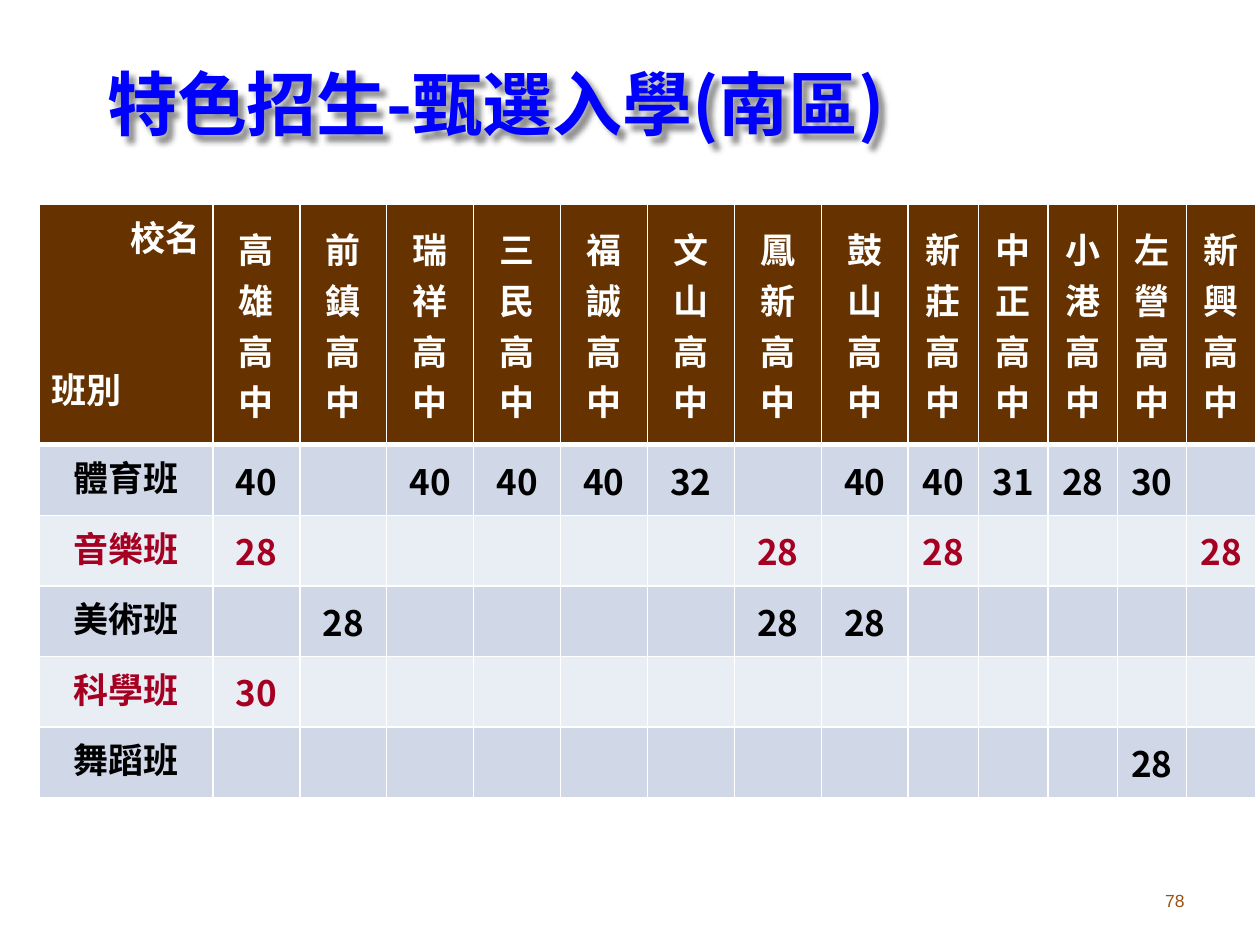
import pptx
import pptx.dml.color
import pptx.enum.text
import pptx.oxml
import pptx.oxml.ns
import pptx.util
from lxml import etree

Inches, Pt = pptx.util.Inches, pptx.util.Pt
RGBColor = pptx.dml.color.RGBColor
Align = pptx.enum.text.PP_ALIGN
Anchor = pptx.enum.text.MSO_ANCHOR
qn = pptx.oxml.ns.qn

BLUE = RGBColor(0x00, 0x00, 0xFF)
BROWN = RGBColor(0x66, 0x33, 0x00)
RUST = RGBColor(0x9A, 0x53, 0x15)
WHITE = RGBColor(0xFF, 0xFF, 0xFF)
BLACK = RGBColor(0x00, 0x00, 0x00)
RED = RGBColor(0xA5, 0x00, 0x21)
BANDS = (RGBColor(0xD0, 0xD8, 0xE8), RGBColor(0xE9, 0xED, 0xF4))
INKS = (BLACK, RED)

FONT = "Noto Sans CJK SC"
SCHOOLS = ["高雄", "前鎮", "瑞祥", "三民", "福誠", "文山", "鳳新",
           "鼓山", "新莊", "中正", "小港", "左營", "新興"]
CLASSES = {
    "體育班": {"高雄": 40, "瑞祥": 40, "三民": 40, "福誠": 40, "文山": 32,
            "鼓山": 40, "新莊": 40, "中正": 31, "小港": 28, "左營": 30},
    "音樂班": {"高雄": 28, "鳳新": 28, "新莊": 28, "新興": 28},
    "美術班": {"前鎮": 28, "鳳新": 28, "鼓山": 28},
    "科學班": {"高雄": 30},
    "舞蹈班": {"左營": 28},
}
WIDTHS = [1.38] + [0.69] * 8 + [0.56] + [0.55] * 4
HEIGHTS = [1.91] + [0.56] * len(CLASSES)

SHADOW = (
    '<a:effectLst xmlns:a="http://schemas.openxmlformats.org/drawingml/2006/main">'
    '<a:outerShdw blurRad="38100" dist="50800" dir="2700000" algn="tl">'
    '<a:srgbClr val="000000"><a:alpha val="43000"/></a:srgbClr>'
    '</a:outerShdw></a:effectLst>'
)


def style(para, size, color, align, name=FONT, bold=True):
    para.alignment = align
    font = para.font
    font.size, font.bold, font.name = Pt(size), bold, name
    font.color.rgb = color
    etree.SubElement(font._element, qn("a:ea"), typeface=name)


def edge(cell, base=1):
    """Draw white cell borders; base is the width of the bottom one."""
    props = cell._tc.get_or_add_tcPr()
    for side, width in (("L", 1), ("R", 1), ("T", 1), ("B", base)):
        line = etree.SubElement(props, qn(f"a:ln{side}"), w=str(Pt(width)))
        fill = etree.SubElement(line, qn("a:solidFill"))
        etree.SubElement(fill, qn("a:srgbClr"), val=str(WHITE))


def paint(cell, fill, base=1):
    edge(cell, base)
    cell.fill.solid()
    cell.fill.fore_color.rgb = fill


def write(cell, text, color, anchor=Anchor.MIDDLE):
    cell.vertical_anchor = anchor
    cell.text = text
    style(cell.text_frame.paragraphs[0], 20, color, Align.CENTER)


def add_title(slide, left, top, width, height):
    title = slide.shapes.title
    title.left, title.top, title.width, title.height = left, top, width, height
    frame = title.text_frame
    frame.text = "特色招生-甄選入學(南區)"
    frame.auto_size = pptx.enum.text.MSO_AUTO_SIZE.NONE
    frame.vertical_anchor = Anchor.BOTTOM
    para = frame.paragraphs[0]
    para.line_spacing = 0.9
    style(para, 40, BLUE, Align.LEFT)
    title._element.spPr.append(pptx.oxml.parse_xml(SHADOW))


def fill_corner(cell):
    frame = cell.text_frame
    frame.text = "校名\n班別"
    above, below = frame.paragraphs
    below.space_before = Pt(58)
    style(above, 20, WHITE, Align.RIGHT)
    style(below, 20, WHITE, Align.LEFT)


def add_quotas(slide, left, top):
    """Place the table of class places by school."""
    grid = slide.shapes.add_table(
        len(HEIGHTS), len(WIDTHS), left, top,
        Inches(sum(WIDTHS)), Inches(sum(HEIGHTS))).table
    grid.horz_banding = False
    for col, width in zip(grid.columns, WIDTHS):
        col.width = Inches(width)
    for row, height in zip(grid.rows, HEIGHTS):
        row.height = Inches(height)

    for col in range(len(WIDTHS)):
        paint(grid.cell(0, col), BROWN, 3)
    fill_corner(grid.cell(0, 0))
    for col, school in enumerate(SCHOOLS, 1):
        write(grid.cell(0, col), school + "高中", WHITE)

    for row, (name, places) in enumerate(CLASSES.items(), 1):
        band, ink = BANDS[(row - 1) % 2], INKS[(row - 1) % 2]
        for col in range(len(WIDTHS)):
            paint(grid.cell(row, col), band)
        write(grid.cell(row, 0), name, ink, Anchor.TOP)
        for school, count in places.items():
            col = SCHOOLS.index(school) + 1
            write(grid.cell(row, col), str(count), ink)


def add_number(slide, left, top, width, height):
    frame = slide.shapes.add_textbox(left, top, width, height).text_frame
    frame.word_wrap = True
    frame.vertical_anchor = Anchor.MIDDLE
    frame.text = "78"
    style(frame.paragraphs[0], 10, RUST, Align.RIGHT, "Arial", False)


def main():
    deck = pptx.Presentation()
    deck.slide_width, deck.slide_height = Inches(10), Inches(7.5)
    slide = deck.slides.add_slide(deck.slide_layouts[5])
    add_number(slide, Inches(7.17), Inches(6.95), Inches(2.33), Inches(0.4))
    add_title(slide, Inches(0.75), Inches(0.28), Inches(9), Inches(0.93))
    add_quotas(slide, Inches(0.31), Inches(1.62))
    deck.save("out.pptx")


if __name__ == "__main__":
    main()
